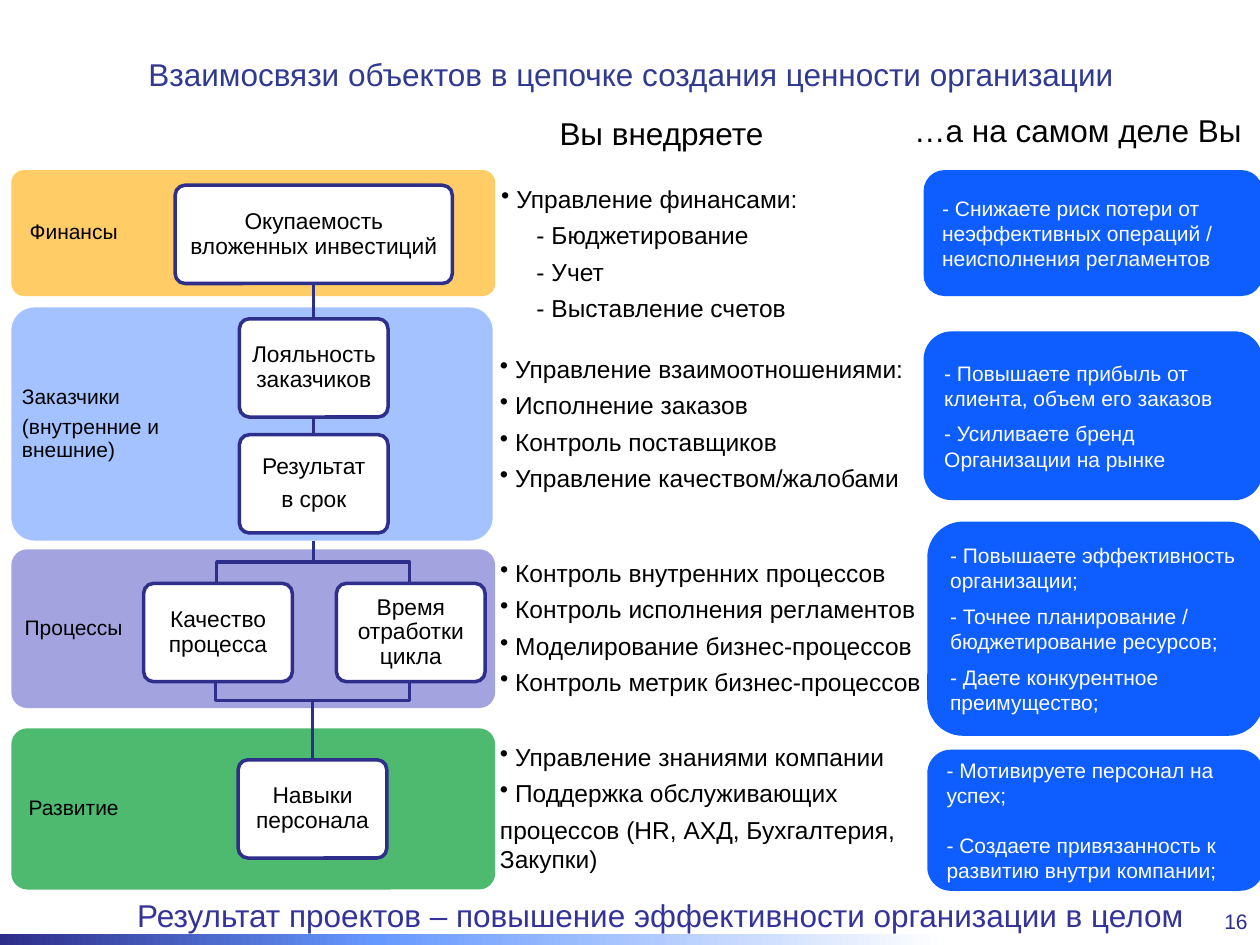
from copy import deepcopy
from pptx import Presentation
from pptx.dml.color import RGBColor
from pptx.enum.shapes import MSO_CONNECTOR, MSO_SHAPE
from pptx.enum.text import MSO_ANCHOR, PP_ALIGN
from pptx.oxml.ns import qn
from pptx.util import Inches, Pt
from lxml.etree import SubElement

rgb = RGBColor.from_string
prs = Presentation()
prs.slide_width, prs.slide_height = Inches(10), Inches(7.5)
col, row = prs.slide_width / 100, prs.slide_height / 75
s = prs.slides.add_slide(prs.slide_layouts[6])

NAVY, BLACK, WHITE, BLUE = "2E2E8B", "000000", "FFFFFF", "0D5DFF"
LEFT, CENTER, RIGHT = PP_ALIGN.LEFT, PP_ALIGN.CENTER, PP_ALIGN.RIGHT
MIDDLE = MSO_ANCHOR.MIDDLE


def grid(*values):
    return [round(v * (row if i % 2 else col)) for i, v in enumerate(values)]


def box(at, lines, size, color, para, frame={}, fill=None, line=None, gap=0):
    if fill:
        sp = s.shapes.add_shape(MSO_SHAPE.ROUNDED_RECTANGLE, *grid(*at))
        sp.shadow.inherit = False
        sp.fill.solid()
        sp.fill.fore_color.rgb = rgb(fill)
        if line:
            sp.line.color.rgb = rgb(line)
            sp.line.width = Pt(2)
        else:
            sp.line.fill.background()
    else:
        sp = s.shapes.add_textbox(*grid(*at))
    tf = sp.text_frame
    for key, value in {"word_wrap": True, **frame}.items():
        setattr(tf, key, value)
    for i, text in enumerate(lines):
        p = tf.paragraphs[0] if i == 0 else tf.add_paragraph()
        for key, value in para.items():
            setattr(p, key, value)
        if gap and i < len(lines) - 1:
            p.space_after = Pt(gap)
        r = p.add_run()
        r.text = text
        for key, value in {"name": "Arial", "size": Pt(size)}.items():
            setattr(r.font, key, value)
        r.font.color.rgb = rgb(color)
    return sp


bar = s.shapes.add_shape(MSO_SHAPE.RECTANGLE, *grid(0, 74.1, 100, 0.9))
bar.shadow.inherit = False
bar.line.fill.background()
bar.fill.gradient()
bar.fill.gradient_angle = 0
stops = bar._element.spPr.find(".//" + qn("a:gsLst"))
stops.append(deepcopy(stops[-1]))
for stop, (pos, color) in zip(bar.fill.gradient_stops, [(0, "2D2D8A"), (0.3, "6699FF"), (0.75, WHITE)]):
    stop.position = pos
    stop.color.rgb = rgb(color)

bands = [
    (13.5, 10, "FFCC66", CENTER, ["Финансы"]),
    (24.4, 18.5, "A3C2FF", LEFT, ["Заказчики", "(внутренние и внешние)"]),
    (43.6, 12.6, "A3A3E0", CENTER, ["Процессы"]),
    (57.8, 12.8, "4DBA6F", CENTER, ["Развитие"]),
]
for top, height, fill, align, lines in bands:
    narrow = align == CENTER
    frame = {"vertical_anchor": MIDDLE, "margin_left": grid(0.5 if narrow else 0.3)[0],
             "margin_right": grid(29 if narrow else 25)[0]}
    sp = box((0.9, top, 38.4 if narrow else 38.2, height), lines, 12, BLACK,
             {"alignment": align, "line_spacing": 0.9}, frame, fill, gap=4.2)
    sp.adjustments[0] = 0.1

for x, top, bottom in [(24.9, 22.6, 25.3), (24.9, 33.1, 34.5), (24.9, 42.9, 44.6), (24.8, 55.6, 60.3)]:
    ln = s.shapes.add_connector(MSO_CONNECTOR.STRAIGHT, *grid(x, top, x, bottom))
    ln.line.color.rgb = rgb(NAVY)
    ln.line.width = Pt(2)
    SubElement(ln._element.spPr, qn("a:effectLst"))

for points in [
    [(17.2, 46.3), (17.2, 44.6), (32.5, 44.6), (32.5, 46.3)],
    [(17.1, 54.2), (17.1, 55.6), (32.5, 55.6), (32.5, 54.2)],
]:
    start, *rest = [grid(*pt) for pt in points]
    fb = s.shapes.build_freeform(*start)
    fb.add_line_segments(rest, close=False)
    sp = fb.convert_to_shape()
    sp.shadow.inherit = False
    sp.fill.background()
    sp.line.color.rgb = rgb(NAVY)
    sp.line.width = Pt(2)

nodes = [
    (13.9, 14.7, 22, ["Окупаемость вложенных инвестиций"]),
    (19, 25.3, 11.8, ["Лояльность заказчиков"]),
    (19, 34.5, 11.8, ["Результат", "в срок"]),
    (11.4, 46.3, 11.8, ["Качество процесса"]),
    (26.7, 46.3, 11.8, ["Время отработки цикла"]),
    (18.9, 60.3, 11.8, ["Навыки персонала"]),
]
pad = grid(0.5)[0]
for x, y, width, lines in nodes:
    sp = box((x, y, width, 7.8), lines, 13, BLACK, {"alignment": CENTER, "line_spacing": 0.9},
             {"vertical_anchor": MIDDLE, "margin_left": pad, "margin_right": pad},
             WHITE, NAVY, 4.5)
    sp.adjustments[0] = 0.1

lists = [
    (38.8, 14.1, 50, 12.1, ["• Управление финансами:", "- Бюджетирование", "- Учет", "- Выставление счетов"]),
    (38.7, 27.6, 34.7, 12.1, ["• Управление взаимоотношениями:", "• Исполнение заказов",
                              "• Контроль поставщиков", "• Управление качеством/жалобами"]),
    (38.7, 43.8, 37.2, 12.1, ["• Контроль внутренних процессов", "• Контроль исполнения регламентов",
                              "• Моделирование бизнес-процессов", "• Контроль метрик бизнес-процессов"]),
    (38.7, 58.4, 39.7, 11.6, ["• Управление знаниями компании", "• Поддержка обслуживающих",
                              "процессов (HR, АХД, Бухгалтерия, Закупки)"]),
]
dent = grid(1.2)[0]
for *at, lines in lists:
    sp = box(at, [t.removeprefix("• ") for t in lines], 14, BLACK, {"alignment": LEFT}, gap=4)
    for p, text in zip(sp.text_frame.paragraphs, lines):
        pPr = p._p.get_or_add_pPr()
        if text.startswith("•"):
            pPr.set("marL", str(dent))
            pPr.set("indent", str(-dent))
            SubElement(pPr, qn("a:buChar")).set("char", "•")
        elif text.startswith("-"):
            pPr.set("marL", str(grid(2.8)[0]))

benefits = [
    (73.3, 13.5, 26.9, 10, 0, ["- Снижаете риск потери от неэффективных операций / неисполнения регламентов"]),
    (73.3, 26.3, 26.9, 13.4, 6, ["- Повышаете прибыль от клиента, объем его заказов",
                                 "- Усиливаете бренд Организации на рынке"]),
    (73.6, 41.4, 26.7, 17, 6, ["- Повышаете эффективность организации;",
                               "- Точнее планирование / бюджетирование ресурсов;",
                               "- Даете конкурентное преимущество;"]),
    (73.6, 59.5, 26.7, 11.2, 14, ["- Мотивируете персонал на успех;",
                                  "- Создаете привязанность к развитию внутри компании;"]),
]
for *at, gap, lines in benefits:
    box(at, lines, 12, WHITE, {"alignment": LEFT}, {"vertical_anchor": MIDDLE}, BLUE, gap=gap)

for at, text, size, color, align, frame in [
    ((10.8, 2.2, 89.2, 7.4), "Взаимосвязи объектов в цепочке создания ценности организации",
     18, "313A91", LEFT, {"vertical_anchor": MIDDLE}),
    ((39.4, 8.6, 26.2, 4), "Вы внедряете", 18, BLACK, CENTER, {}),
    ((71.1, 8.3, 28.9, 4), "…а на самом деле Вы", 18, BLACK, CENTER, {}),
    ((9.9, 70.6, 85.9, 4), "Результат проектов – повышение эффективности организации в целом",
     18, "333399", LEFT, {}),
    ((93.2, 71.2, 6.8, 3.8), "16", 12, "2D2D8A", RIGHT, {"vertical_anchor": MIDDLE}),
]:
    box(at, [text], size, color, {"alignment": align}, frame)

prs.save("out.pptx")
